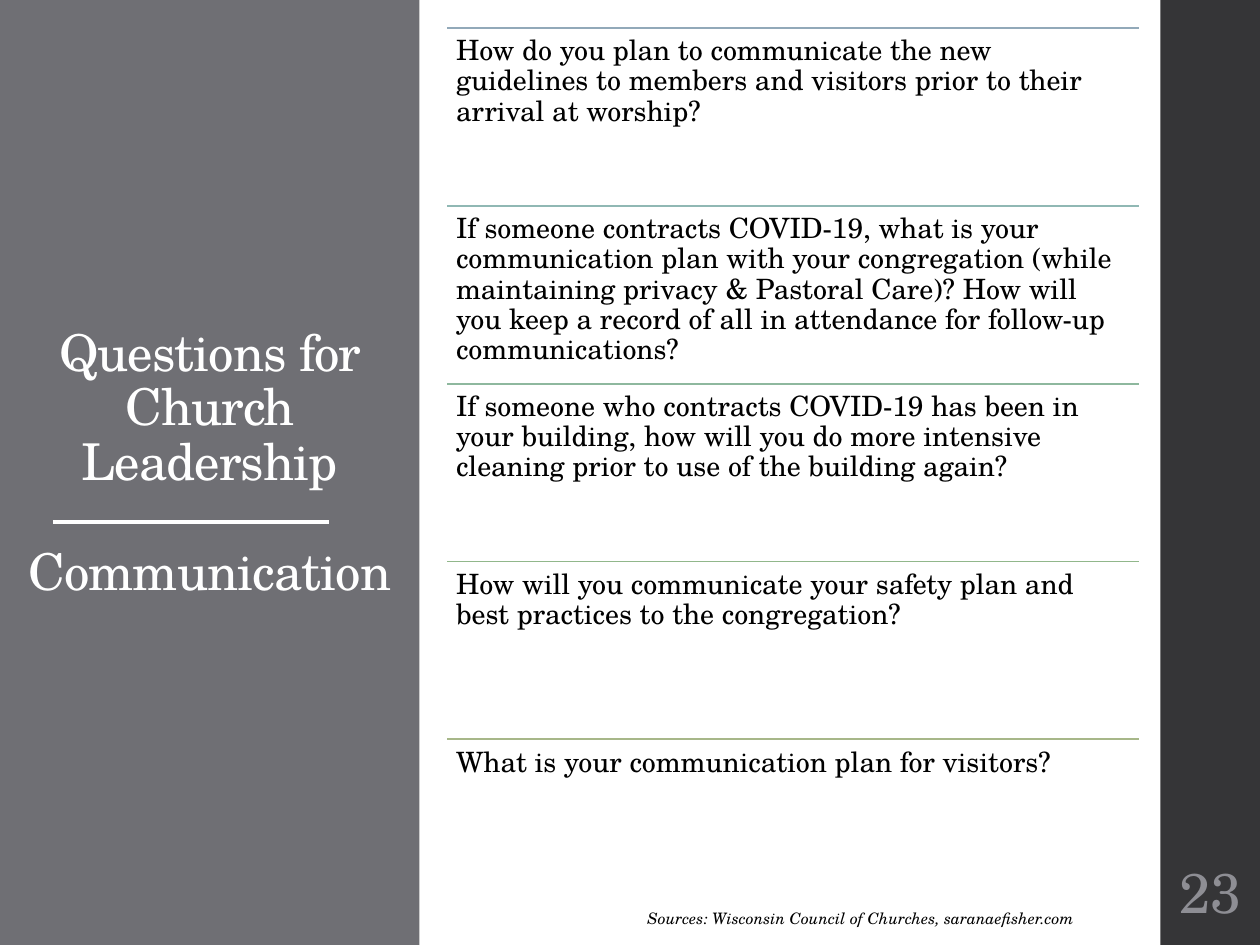
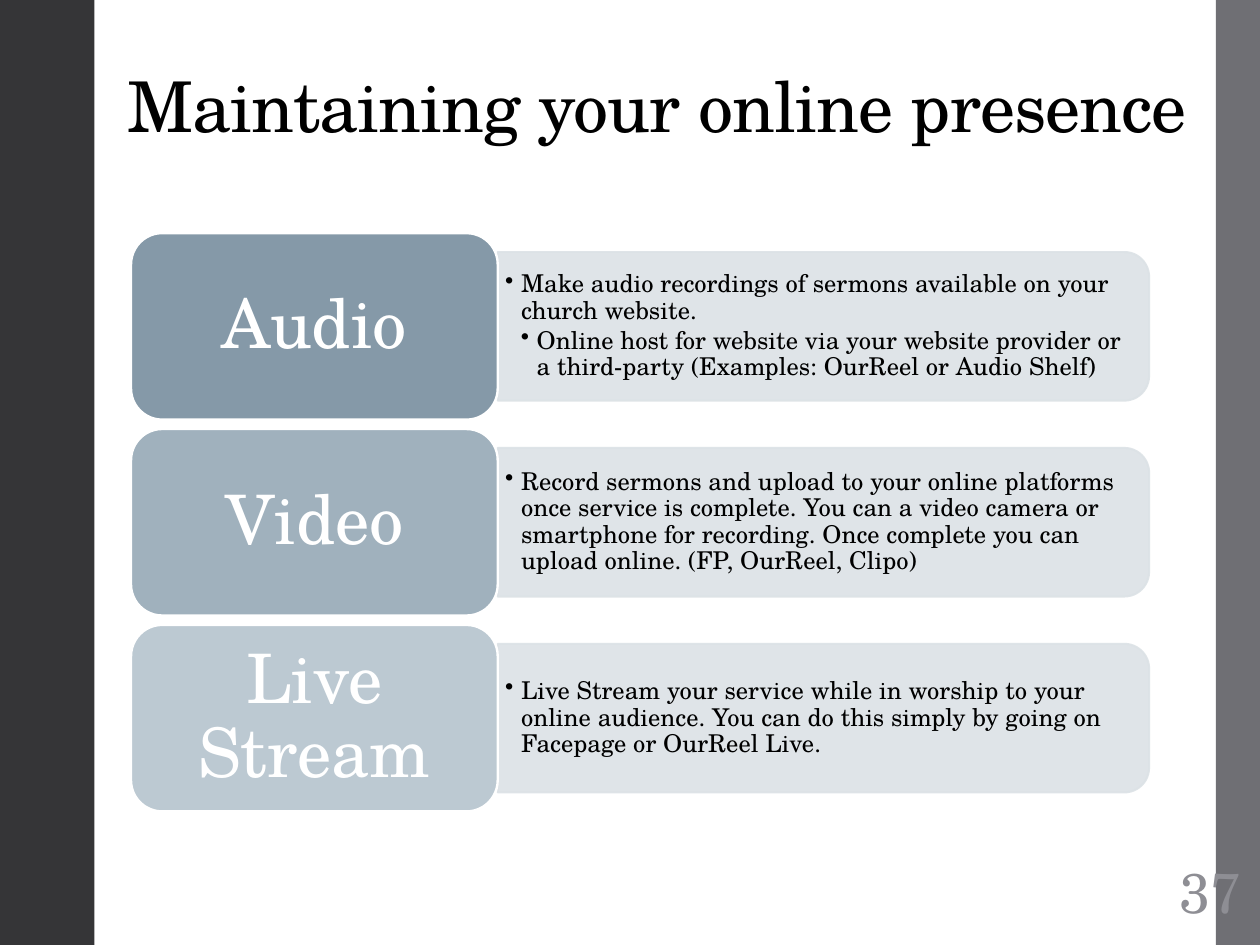
from lxml.etree import SubElement
from pptx import Presentation
from pptx.dml.color import RGBColor
from pptx.enum.shapes import MSO_CONNECTOR, MSO_SHAPE
from pptx.enum.text import MSO_ANCHOR, PP_ALIGN
from pptx.oxml.ns import qn
from pptx.util import Inches, Pt

FONT = "TeX Gyre Schola"
COLORS = {
    "dark": "353537", "gray": "6F6F74", "number": "8E8E94",
    "white": "FFFFFF", "black": "000000", "bar": "DCE2E6",
}

presentation = Presentation()
presentation.slide_width = Inches(10)
presentation.slide_height = Inches(7.5)
COLUMN = presentation.slide_width / 100
ROW = presentation.slide_height / 100


def add_box(slide, left, top, width, height, kind=None, fill=None, line=None, line_width=1):
    area = [int(left * COLUMN), int(top * ROW), int(width * COLUMN), int(height * ROW)]
    if kind is None:
        return slide.shapes.add_textbox(*area)
    shape = slide.shapes.add_shape(kind, *area)
    shape.shadow.inherit = False
    shape.fill.solid()
    shape.fill.fore_color.rgb = RGBColor.from_string(fill)
    if line:
        shape.line.color.rgb = RGBColor.from_string(line)
        shape.line.width = Pt(line_width)
    else:
        shape.line.fill.background()
    return shape


def add_text(shape, text, size, color="black", align=PP_ALIGN.LEFT, anchor=MSO_ANCHOR.TOP,
             insets=(0.1, 0.05), line_spacing=0.9, gap=0, tracking=0, italic=False,
             bullets=False, wrap=True):
    frame = shape.text_frame
    frame.word_wrap = wrap
    frame.vertical_anchor = anchor
    frame.margin_left = frame.margin_right = Inches(insets[0])
    frame.margin_top = frame.margin_bottom = Inches(insets[1])
    for index, words in enumerate(text.split("\n")):
        paragraph = frame.paragraphs[0] if index == 0 else frame.add_paragraph()
        if bullets:
            paragraph.level = index + 1
            properties = paragraph._p.get_or_add_pPr()
            properties.set("marL", str(Inches(0.125 * (index + 1))))
            properties.set("indent", str(-Inches(0.125)))
            SubElement(properties, qn("a:buChar")).set("char", "•")
        paragraph.alignment = align
        paragraph.line_spacing = line_spacing
        if index:
            paragraph.space_before = Pt(gap)
        run = paragraph.add_run()
        run.text = words
        run.font.name = FONT
        run.font.size = Pt(size)
        run.font.italic = italic
        run.font.color.rgb = RGBColor.from_string(COLORS[color])
        if tracking:
            run._r.get_or_add_rPr().set("spc", str(int(tracking * 100)))


blank_layout = presentation.slide_layouts[6]
questions_slide = presentation.slides.add_slide(blank_layout)
online_slide = presentation.slides.add_slide(blank_layout)

bands = [
    (questions_slide, 0, 33.3, "gray"),
    (questions_slide, 92.1, 7.9, "dark"),
    (online_slide, 0, 7.5, "dark"),
    (online_slide, 96.5, 3.5, "gray"),
]
for slide, left, width, color in bands:
    add_box(slide, left, 0, width, 100, MSO_SHAPE.RECTANGLE, COLORS[color])

title = add_box(questions_slide, 1.1, 11.33, 31.1, 75.6)
add_text(title, "Questions for Church Leadership\nCommunication", 29, "white",
         align=PP_ALIGN.CENTER, anchor=MSO_ANCHOR.MIDDLE, gap=31.3, tracking=-0.5)

questions = [
    ("92A9B9", "How do you plan to communicate the new guidelines to members and visitors "
               "prior to their arrival at worship?"),
    ("90B8B4", "If someone contracts COVID-19, what is your communication plan with your "
               "congregation (while maintaining privacy & Pastoral Care)? How will you keep a "
               "record of all in attendance for follow-up communications?"),
    ("8EB89E", "If someone who contracts COVID-19 has been in your building, how will you do "
               "more intensive cleaning prior to use of the building again?"),
    ("91B78B", "How will you communicate your safety plan and best practices to the congregation?"),
    ("A7B789", "What is your communication plan for visitors?"),
]
question_left, question_width, question_top, question_height = 35.5, 54.9, 2.93, 18.83
rules = [(42 / 10, 21.9, 55.2, COLORS["white"], 2.25)]
for index, (color, question) in enumerate(questions):
    top = question_top + index * question_height
    rules.append((question_left, question_width, top, color, 1.1))
    box = add_box(questions_slide, question_left, top, question_width, question_height)
    add_text(box, question, 16, insets=(0.07, 0.07))

for left, width, top, color, weight in rules:
    rule = questions_slide.shapes.add_connector(
        MSO_CONNECTOR.STRAIGHT, int(left * COLUMN), int(top * ROW),
        int((left + width) * COLUMN), int(top * ROW))
    rule.line.color.rgb = RGBColor.from_string(color)
    rule.line.width = Pt(weight)
    SubElement(rule._element.spPr, qn("a:effectLst"))

sources = add_box(questions_slide, 50.4, 95.47, 36.4, 3.33)
add_text(sources, "Sources: Wisconsin Council of Churches, saranaefisher.com", 9,
         italic=True, line_spacing=1, wrap=False)

title = add_box(online_slide, 9.1, -3.07, 88.1, 19.33)
add_text(title, "Maintaining your online presence", 40, anchor=MSO_ANCHOR.BOTTOM, tracking=-0.5)

channels = [
    ("Audio", "8599A8",
     "Make audio recordings of sermons available on your church website.\n"
     "Online host for website via your website provider or a third-party "
     "(Examples: OurReel or Audio Shelf)"),
    ("Video", "A0B1BD",
     "Record sermons and upload to your online platforms once service is complete. You can a "
     "video camera or smartphone for recording. Once complete you can upload online. "
     "(FP, OurReel, Clipo)"),
    ("Live Stream", "BCC9D2",
     "Live Stream your service while in worship to your online audience. You can do this "
     "simply by going on Facepage or OurReel Live."),
]
card_left, card_width, card_top, card_height, card_pitch = 10.4, 29.1, 24.67, 19.73, 20.73
bar_left, bar_length, bar_thickness = 39.5, 51.7, 11.8
bar_rows = bar_length * COLUMN / ROW
detail_height = 14.27
for index, (name, color, details) in enumerate(channels):
    top = card_top + index * card_pitch
    middle = top + card_height / 2
    bar = add_box(online_slide, bar_left + (bar_length - bar_thickness) / 2, middle - bar_rows / 2,
                  bar_thickness, bar_rows, MSO_SHAPE.ROUND_2_SAME_RECTANGLE,
                  COLORS["bar"], COLORS["bar"], 1.1)
    bar.rotation = 90
    for paint in bar._element.spPr.iter(qn("a:srgbClr")):
        SubElement(paint, qn("a:alpha")).set("val", "90000")
    box = add_box(online_slide, bar_left, middle - detail_height / 2, 51.2, detail_height)
    add_text(box, details, 14, anchor=MSO_ANCHOR.MIDDLE, insets=(0.06, 0.03), gap=2, bullets=True)
    card = add_box(online_slide, card_left, top, card_width, card_height,
                   MSO_SHAPE.ROUNDED_RECTANGLE, color, COLORS["white"], 1.35)
    add_text(card, name, 39, "white", align=PP_ALIGN.CENTER, anchor=MSO_ANCHOR.MIDDLE,
             insets=(0.16, 0.08))

for slide, number in [(questions_slide, "23"), (online_slide, "37")]:
    box = add_box(slide, 92.3, 90, 7.5, 8.67)
    add_text(box, number, 32, "number", align=PP_ALIGN.CENTER, anchor=MSO_ANCHOR.MIDDLE,
             insets=(0.03, 0.05), line_spacing=1)

presentation.save("out.pptx")
